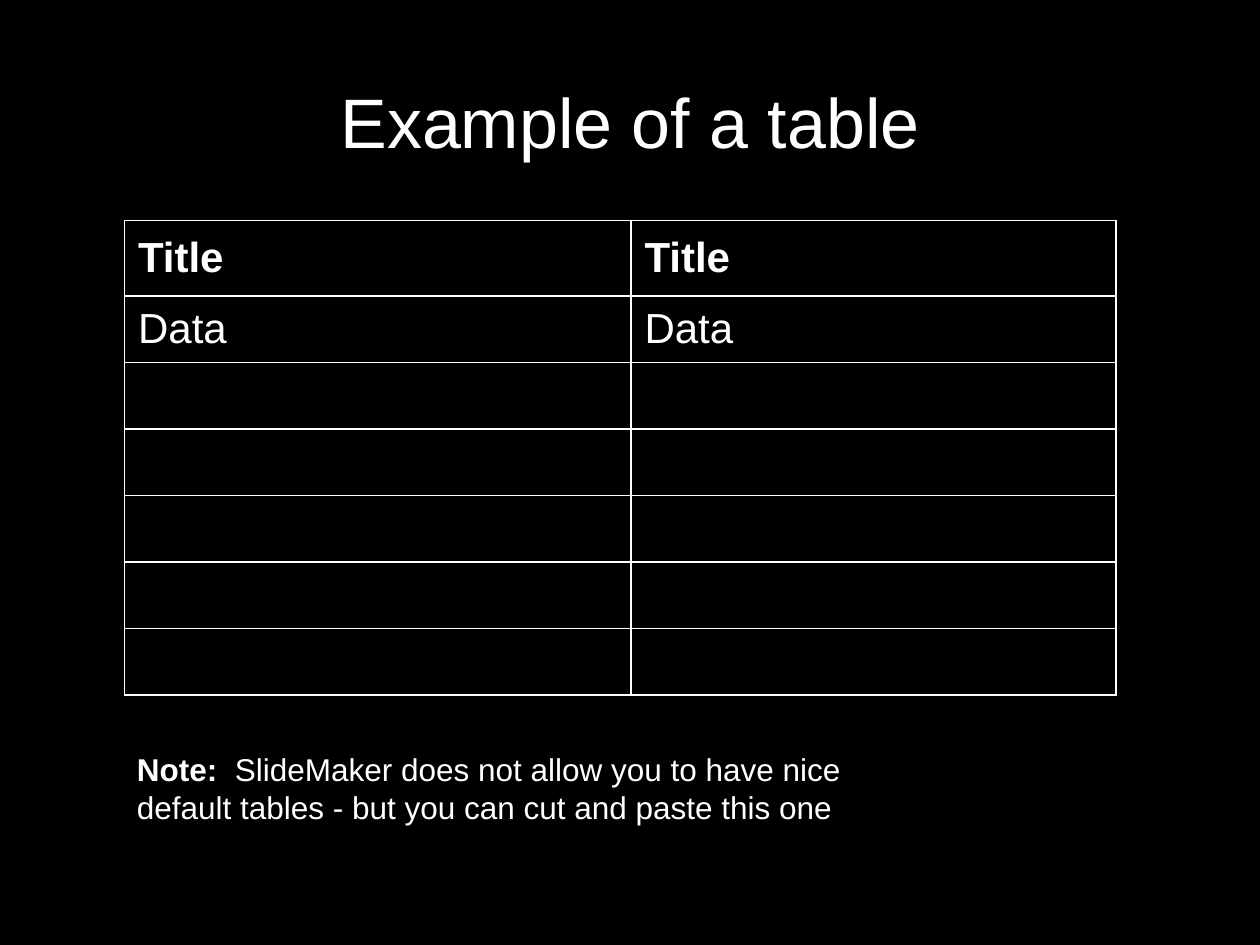
from lxml import etree
from pptx import Presentation
from pptx.dml.color import RGBColor
from pptx.enum.text import MSO_ANCHOR, MSO_AUTO_SIZE, PP_ALIGN
from pptx.oxml.ns import qn
from pptx.util import Pt

CENTER = PP_ALIGN.CENTER
MIDDLE = MSO_ANCHOR.MIDDLE
GROW = MSO_AUTO_SIZE.SHAPE_TO_FIT_TEXT
TITLE_ONLY = 5

COLORS = {"background": "000000", "text": "FFFFFF", "border": "FFFFFF"}
FONT = "Arial"

HEADERS = ["Title", "Title"]
DATA_ROWS = [["Data", "Data"]] + [["", ""]] * 5
COLUMN_WIDTHS = [289.44, 277.2]
HEADER_HEIGHT, ROW_HEIGHT = 43.2, 38


class SlideBuilder:
    def __init__(self, presentation):
        self.slide = presentation.slides.add_slide(
            presentation.slide_layouts[TITLE_ONLY])
        background = self.slide.background.fill
        background.solid()
        background.fore_color.rgb = RGBColor.from_string(COLORS["background"])

    def style(self, font, size, bold=False):
        font.name = FONT
        font.size = Pt(size)
        font.bold = bold
        font.color.rgb = RGBColor.from_string(COLORS["text"])

    def title(self, wording, left, top, width, height):
        title = self.slide.shapes.title
        title.left, title.top = Pt(left), Pt(top)
        title.width, title.height = Pt(width), Pt(height)
        frame = title.text_frame
        frame.text = wording
        frame.vertical_anchor = MIDDLE
        heading = frame.paragraphs[0]
        heading.alignment = CENTER
        self.style(heading.font, 40)

    def border(self, cell, weight=1):
        properties = cell._tc.get_or_add_tcPr()
        for side in ("a:lnL", "a:lnR", "a:lnT", "a:lnB"):
            line = etree.SubElement(properties, qn(side), w=str(Pt(weight)))
            fill = etree.SubElement(line, qn("a:solidFill"))
            etree.SubElement(fill, qn("a:srgbClr"), val=COLORS["border"])

    def table(self, rows, left, top, column_widths, row_heights):
        """Add a bordered, unfilled table whose first row is bold."""
        table = self.slide.shapes.add_table(
            len(rows), len(column_widths), Pt(left), Pt(top),
            Pt(sum(column_widths)), Pt(sum(row_heights))).table
        table.first_row = table.horz_banding = False
        for column, width in zip(table.columns, column_widths):
            column.width = Pt(width)
        for index, (row, height) in enumerate(zip(table.rows, row_heights)):
            row.height = Pt(height)
            for cell, wording in zip(row.cells, rows[index]):
                self.border(cell)
                cell.fill.background()
                cell.vertical_anchor = MIDDLE
                cell.margin_left = cell.margin_right = Pt(7.7)
                cell.text = wording
                self.style(cell.text_frame.paragraphs[0].font, 24, index == 0)

    def note(self, label, wording, left, top, width, height):
        frame = self.slide.shapes.add_textbox(
            Pt(left), Pt(top), Pt(width), Pt(height)).text_frame
        frame.word_wrap = True
        frame.auto_size = GROW
        for part, bold in ((label, True), (wording, False)):
            run = frame.paragraphs[0].add_run()
            run.text = part
            self.style(run.font, 18, bold)


def main():
    presentation = Presentation()
    presentation.slide_width, presentation.slide_height = Pt(720), Pt(540)
    builder = SlideBuilder(presentation)
    builder.title("Example of a table", 36, 24, 648, 90)
    builder.table([HEADERS] + DATA_ROWS, 71.2, 126, COLUMN_WIDTHS,
                  [HEADER_HEIGHT] + [ROW_HEIGHT] * len(DATA_ROWS))
    builder.note("Note:  ",
                 "SlideMaker does not allow you to have nice default tables"
                 " - but you can cut and paste this one",
                 71.2, 425, 449.3, 51)
    presentation.save("out.pptx")


if __name__ == "__main__":
    main()
